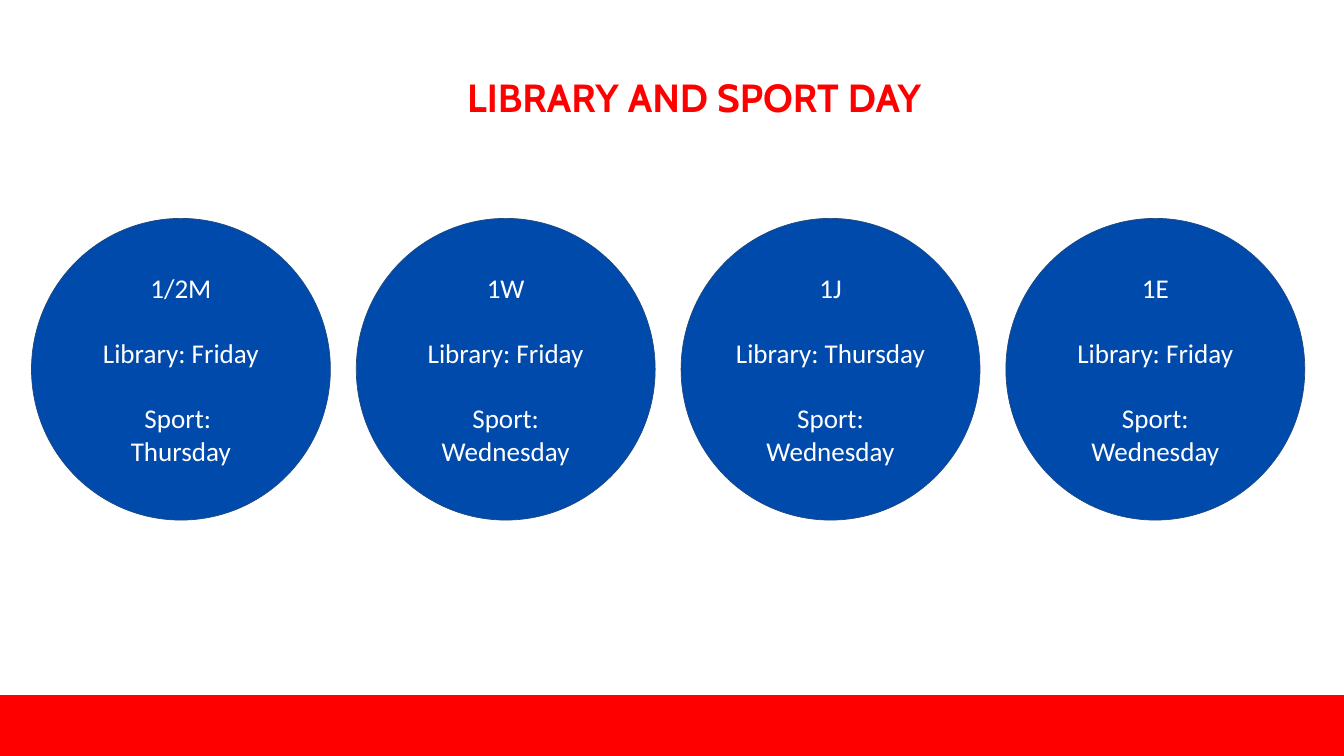
from pptx import Presentation
from pptx.dml.color import RGBColor
from pptx.enum.shapes import MSO_SHAPE
from pptx.enum.text import MSO_ANCHOR, PP_ALIGN
from pptx.util import Pt

EMU_PER_PX = 9525
ELLIPSE = MSO_SHAPE.OVAL
RECTANGLE = MSO_SHAPE.RECTANGLE
CENTER = PP_ALIGN.CENTER
MIDDLE = MSO_ANCHOR.MIDDLE

RED = RGBColor(0xFF, 0x00, 0x00)
BLUE = RGBColor(0x00, 0x4A, 0xAC)
NAVY = RGBColor(0x1F, 0x49, 0x7D)
WHITE = RGBColor(0xFF, 0xFF, 0xFF)

CLASSES = [
    ("1/2M", "Library: Friday", "Sport: \nThursday"),
    ("1W", "Library: Friday", "Sport: Wednesday"),
    ("1J", "Library: Thursday", "Sport: Wednesday"),
    ("1E", "Library: Friday", "Sport: Wednesday"),
]


def px(length):
    return length * EMU_PER_PX


def set_margins(frame, margin):
    frame.margin_left = frame.margin_right = px(margin)
    frame.margin_top = frame.margin_bottom = px(margin)


def add_run(paragraph, text, font_name, size, color, bold=False):
    run = paragraph.add_run()
    run.text = text
    run.font.name = font_name
    run.font.size = Pt(size)
    run.font.color.rgb = color
    run.font.bold = bold


def add_heading(slide, left, top, width, height):
    heading = slide.shapes.title
    heading.left, heading.top = px(left), px(top)
    heading.width, heading.height = px(width), px(height)
    frame = heading.text_frame
    frame.word_wrap = True
    frame.vertical_anchor = MIDDLE
    set_margins(frame, 0)
    paragraph = frame.paragraphs[0]
    paragraph.alignment = CENTER
    add_run(paragraph, "LIBRARY AND SPORT DAY", "Cabin", 42, RED, True)


def add_footer_band(slide, left, top, width, height):
    band = slide.shapes.add_shape(RECTANGLE, px(left), px(top), px(width), px(height))
    band.shadow.inherit = False
    band.fill.solid()
    band.fill.fore_color.rgb = RED
    band.line.fill.background()


def add_class_circle(slide, left, top, width, height, details):
    circle = slide.shapes.add_shape(ELLIPSE, px(left), px(top), px(width), px(height))
    circle.shadow.inherit = False
    circle.fill.solid()
    circle.fill.fore_color.rgb = BLUE
    circle.line.color.rgb = NAVY
    circle.line.width = Pt(0.75)
    frame = circle.text_frame
    frame.word_wrap = True
    frame.vertical_anchor = MIDDLE
    set_margins(frame, 10)
    for index, detail in enumerate(details):
        paragraph = frame.add_paragraph() if index else frame.paragraphs[0]
        paragraph.alignment = CENTER
        paragraph.space_before = Pt(35 if index else 0)
        for line_index, line in enumerate(detail.split("\n")):
            if line_index:
                paragraph.add_line_break()
            add_run(paragraph, line, "Calibri", 29, WHITE)


def add_class_row(slide, left, top, width, height):
    circle_width = 427
    pitch = (width - circle_width) // (len(CLASSES) - 1)
    for index, details in enumerate(CLASSES):
        add_class_circle(slide, left + index * pitch, top, circle_width, height, details)


def main():
    presentation = Presentation()
    presentation.slide_width = px(1920)
    presentation.slide_height = px(1080)
    slide = presentation.slides.add_slide(presentation.slide_layouts[5])
    slide.background.fill.solid()
    slide.background.fill.fore_color.rgb = WHITE
    add_heading(slide, 120, 104, 1743, 69)
    add_footer_band(slide, 0, 993, 1920, 87)
    add_class_row(slide, 45, 312, 1819, 431)
    presentation.save("out.pptx")


if __name__ == "__main__":
    main()
